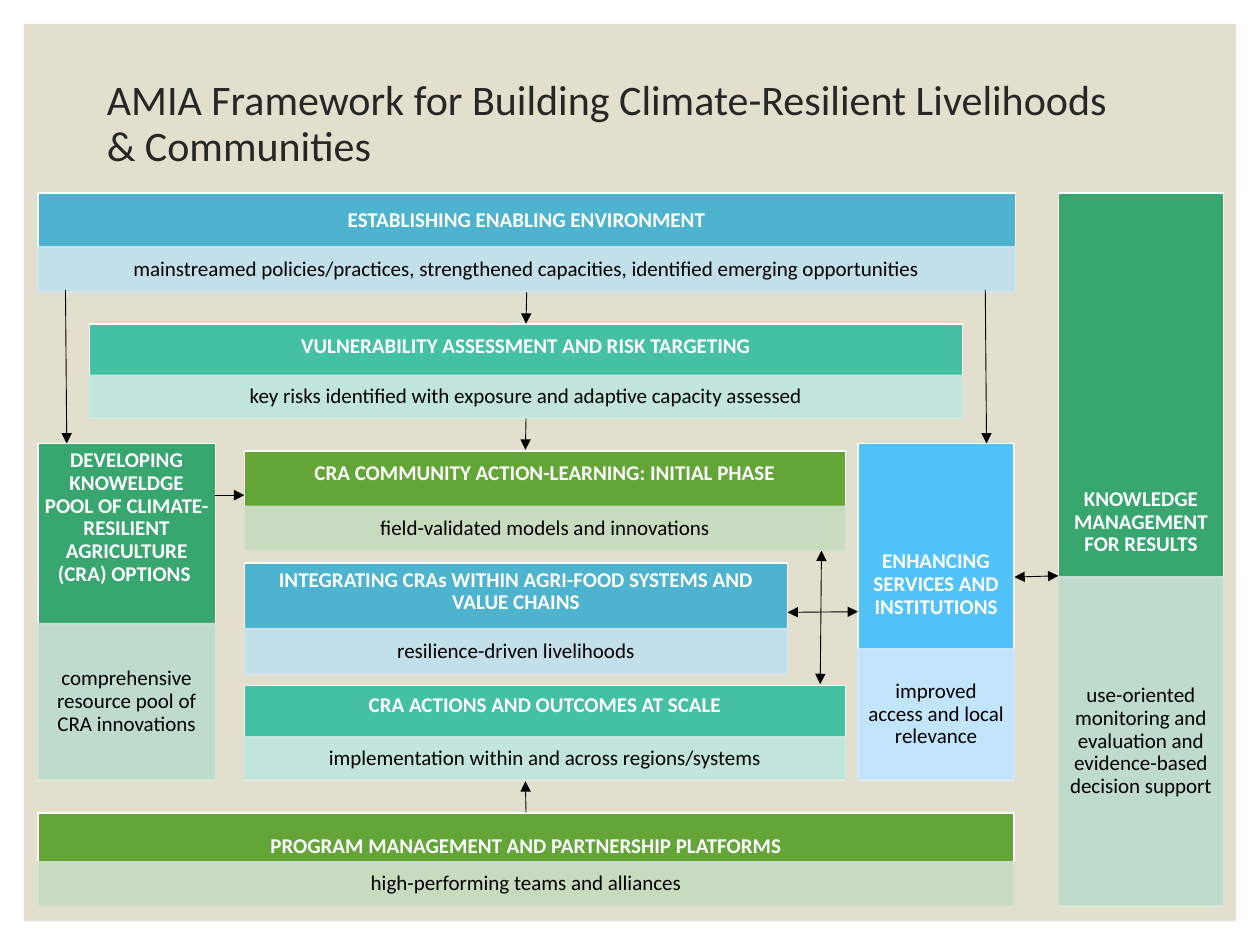
from dataclasses import dataclass
from typing import Optional

import pptx
import pptx.dml.color
import pptx.enum.shapes
import pptx.enum.text
import pptx.oxml.ns
import pptx.util
from lxml import etree

Inches = pptx.util.Inches
Pt = pptx.util.Pt
ANCHOR = pptx.enum.text.MSO_ANCHOR
ALIGN = pptx.enum.text.PP_ALIGN
SHAPE = pptx.enum.shapes.MSO_SHAPE
qn = pptx.oxml.ns.qn

COLOURS = {
    "background": "E2DFCC", "title": "262626", "white": "FFFFFF", "black": "000000",
    "blue": "4EB3CF", "blue tint": "D0E5ED",
    "teal": "44C1A3", "teal tint": "CFE9E0",
    "lime": "63A537", "lime tint": "D3E1CE",
    "green": "37A76F", "green tint": "CEE1D5",
    "sky": "51C3F9", "sky tint": "D0E9FD",
}
TOP, LEFT, BOTTOM = 0, 1, 2


@dataclass
class Panel:
    """A coloured heading box whose lower part is covered by a pale outcome box."""
    name: str
    left: float
    top: float
    width: float
    height: float
    outcome_top: float
    colour: str
    heading: str
    outcome: str
    anchor: ANCHOR = ANCHOR.MIDDLE
    bottom_inset: float = 0.48


@dataclass
class Arrow:
    start: tuple[float, float]
    end: tuple[float, float]
    double: bool = False
    start_joint: Optional[tuple[str, int]] = None
    end_joint: Optional[tuple[str, int]] = None


PANELS = [
    Panel("platforms", 0.3, 6.45, 7.75, 0.74, 6.84, "lime",
          "PROGRAM MANAGEMENT AND PARTNERSHIP PLATFORMS",
          "high-performing teams and alliances", bottom_inset=0.25),
    Panel("scale", 1.94, 5.44, 4.77, 0.75, 5.85, "teal",
          "CRA ACTIONS AND OUTCOMES AT SCALE",
          "implementation within and across regions/systems"),
    Panel("integration", 1.94, 4.47, 4.31, 0.88, 4.99, "blue",
          "INTEGRATING CRAs WITHIN AGRI-FOOD SYSTEMS AND VALUE CHAINS",
          "resilience-driven livelihoods"),
    Panel("services", 6.81, 3.52, 1.24, 2.67, 5.15, "sky",
          "ENHANCING SERVICES AND INSTITUTIONS",
          "improved access and local relevance"),
    Panel("community", 1.94, 3.58, 4.77, 0.79, 4.02, "lime",
          "CRA COMMUNITY ACTION-LEARNING: INITIAL PHASE",
          "field-validated models and innovations"),
    Panel("options", 0.3, 3.52, 1.41, 2.67, 4.95, "green",
          "DEVELOPING KNOWELDGE POOL OF CLIMATE-RESILIENT AGRICULTURE (CRA) OPTIONS ",
          "comprehensive resource pool of CRA innovations", ANCHOR.TOP),
    Panel("vulnerability", 0.71, 2.57, 6.93, 0.75, 2.98, "teal",
          "VULNERABILITY ASSESSMENT AND RISK TARGETING",
          "key risks identified with exposure and adaptive capacity assessed", ANCHOR.BOTTOM),
    Panel("environment", 0.3, 1.53, 7.76, 0.79, 1.96, "blue",
          "ESTABLISHING ENABLING ENVIRONMENT",
          "mainstreamed policies/practices, strengthened capacities, "
          "identified emerging opportunities", ANCHOR.BOTTOM),
    Panel("knowledge", 8.4, 1.53, 1.31, 5.66, 4.58, "green",
          "KNOWLEDGE MANAGEMENT FOR RESULTS",
          "use-oriented monitoring and evaluation and evidence-based decision support"),
]

ARROWS = [
    Arrow((0.52, 2.3), (0.53, 3.52)),
    Arrow((7.82, 2.3), (7.83, 3.52)),
    Arrow((4.18, 2.32), (4.18, 2.57), start_joint=("environment", BOTTOM),
          end_joint=("vulnerability", TOP)),
    Arrow((4.17, 3.32), (4.17, 3.57), start_joint=("vulnerability", BOTTOM)),
    Arrow((1.71, 3.93), (1.94, 3.93)),
    Arrow((6.52, 4.37), (6.51, 5.43), double=True),
    Arrow((6.25, 4.86), (6.81, 4.86), double=True, end_joint=("services", LEFT)),
    Arrow((4.17, 6.45), (4.17, 6.2), start_joint=("platforms", TOP)),
    Arrow((8.05, 4.58), (8.4, 4.57), double=True),
]


def rgb(name: str) -> pptx.dml.color.RGBColor:
    return pptx.dml.color.RGBColor.from_string(COLOURS[name])


def write_text(shape, text: str, *, colour: str, size: float = 12, bold: bool = False,
               align=ALIGN.CENTER, anchor=ANCHOR.MIDDLE,
               insets: tuple[float, ...] = (0.1, 0.05, 0.1, 0.05)) -> None:
    """Fill the shape with one paragraph; insets run left, top, right, bottom."""
    frame = shape.text_frame
    frame.word_wrap = True
    frame.vertical_anchor = anchor
    frame.margin_left, frame.margin_top, frame.margin_right, frame.margin_bottom = map(
        Inches, insets)
    para = frame.paragraphs[0]
    para.alignment = align
    para.line_spacing = 0.9
    span = para.add_run()
    span.text = text
    span.font.name = "Calibri"
    span.font.size = Pt(size)
    span.font.bold = bold
    span.font.color.rgb = rgb(colour)


def add_box(slide, left: float, top: float, width: float, height: float,
            fill: str, line: Optional[str] = None):
    box = slide.shapes.add_shape(SHAPE.RECTANGLE, Inches(left), Inches(top),
                                 Inches(width), Inches(height))
    box.shadow.inherit = False
    box.fill.solid()
    box.fill.fore_color.rgb = rgb(fill)
    if line:
        box.line.color.rgb = rgb(line)
        box.line.width = Pt(1)
    else:
        box.line.fill.background()
    return box


def set_opacity(box, percent: int) -> None:
    for colour in box._element.spPr.iter(qn("a:srgbClr")):
        etree.SubElement(colour, qn("a:alpha"), val=str(percent * 1000))


def add_panel(slide, panel: Panel):
    heading = add_box(slide, panel.left, panel.top, panel.width, panel.height,
                      panel.colour, "white")
    write_text(heading, panel.heading, colour="white", bold=True, anchor=panel.anchor,
               insets=(0.05, 0.05, 0.05, panel.bottom_inset))
    tint = panel.colour + " tint"
    outcome = add_box(slide, panel.left, panel.outcome_top, panel.width,
                      panel.top + panel.height - panel.outcome_top, tint, tint)
    set_opacity(outcome, 90)
    write_text(outcome, panel.outcome, colour="black", insets=(0.08, 0.01, 0.08, 0.01))
    return heading


def add_arrow(slide, arrow: Arrow, headings: dict) -> None:
    connector = slide.shapes.add_connector(
        pptx.enum.shapes.MSO_CONNECTOR.STRAIGHT, *map(Inches, arrow.start + arrow.end))
    if arrow.start_joint:
        name, side = arrow.start_joint
        connector.begin_connect(headings[name], side)
    if arrow.end_joint:
        name, side = arrow.end_joint
        connector.end_connect(headings[name], side)
    connector.line.color.rgb = rgb("black")
    connector.line.width = Pt(0.5)
    line = connector.line._get_or_add_ln()
    if arrow.double:
        etree.SubElement(line, qn("a:headEnd"), type="triangle")
    etree.SubElement(line, qn("a:tailEnd"), type="triangle")
    etree.SubElement(connector._element.spPr, qn("a:effectLst"))


def main() -> None:
    deck = pptx.Presentation()
    deck.slide_width, deck.slide_height = Inches(10), Inches(7.5)
    slide = deck.slides.add_slide(deck.slide_layouts[6])
    add_box(slide, 0.19, 0.19, 9.62, 7.12, "background")
    title = slide.shapes.add_textbox(Inches(0.75), Inches(0.24), Inches(8.4), Inches(1.5))
    write_text(title, "AMIA Framework for Building Climate-Resilient Livelihoods & Communities",
               colour="title", size=24, align=ALIGN.LEFT)
    headings = {panel.name: add_panel(slide, panel) for panel in PANELS}
    for arrow in ARROWS:
        add_arrow(slide, arrow, headings)
    deck.save("out.pptx")


if __name__ == "__main__":
    main()
